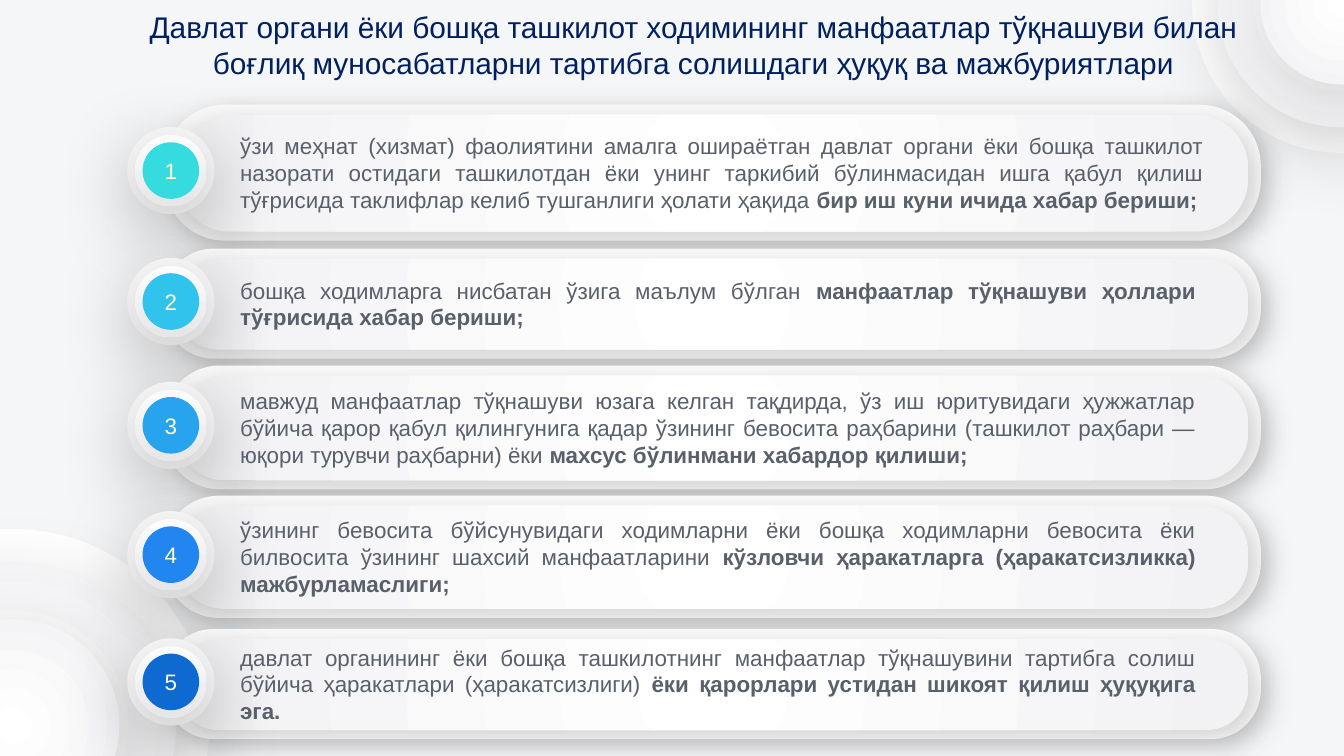
from lxml import etree
from pptx import Presentation
from pptx import util as u
from pptx.dml.color import RGBColor
from pptx.enum import shapes, text
from pptx.oxml import ns

COLORS = {
    "background": "F5F6F8", "white": "FFFFFF", "pill": "FCFCFC",
    "pill_edge": "F2F2F4", "disc_edge": "F0F0F3", "title": "002060",
    "body": "595F6B", "number": "FFFFCC",
}
# opacity %, blur pt, distance pt, direction in degrees
PILL_SHADOW = (17, 14, 5, 40)
DISC_SHADOW = (15, 45, 11.2, 85)
RING_SHADOW = (30, 45, 11.2, 85)

TITLE = ("Давлат органи ёки бошқа ташкилот ходимининг манфаатлар тўқнашуви билан "
         "боғлиқ муносабатларни тартибга солишдаги ҳуқуқ ва мажбуриятлари")

# top and height of the pill (cm), text width and height (cm), badge colour, plain text, bold text
ROWS = [
    (1.98, 2.57, 18.72, 1.8, "36DBE0",
     "ўзи меҳнат (хизмат) фаолиятини амалга ошираётган давлат органи ёки бошқа "
     "ташкилот назорати остидаги ташкилотдан ёки унинг таркибий бўлинмасидан ишга "
     "қабул қилиш тўғрисида таклифлар келиб тушганлиги ҳолати ҳақида ",
     "бир иш куни ичида хабар бериши;"),
    (4.7, 2.08, 18.57, 1.27, "30C3EB",
     "бошқа ходимларга нисбатан ўзига маълум бўлган ",
     "манфаатлар тўқнашуви ҳоллари тўғрисида хабар бериши;"),
    (6.91, 2.34, 18.57, 1.8, "28A3EE",
     "мавжуд манфаатлар тўқнашуви юзага келган тақдирда, ўз иш юритувидаги ҳужжатлар "
     "бўйича қарор қабул қилингунига қадар ўзининг бевосита раҳбарини (ташкилот "
     "раҳбари — юқори турувчи раҳбарни) ёки ",
     "махсус бўлинмани хабардор қилиши;"),
    (9.37, 2.31, 18.57, 1.8, "2186F0",
     "ўзининг бевосита бўйсунувидаги ходимларни ёки бошқа ходимларни бевосита ёки "
     "билвосита ўзининг шахсий манфаатларини ",
     "кўзловчи ҳаракатларга (ҳаракатсизликка) мажбурламаслиги;"),
    (11.89, 2.08, 18.57, 1.8, "0E6AD0",
     "давлат органининг ёки бошқа ташкилотнинг манфаатлар тўқнашувини тартибга солиш "
     "бўйича ҳаракатлари (ҳаракатсизлиги) ",
     "ёки қарорлари устидан шикоят қилиш ҳуқуқига эга."),
]


def rgb(name):
    return RGBColor.from_string(COLORS.get(name, name))


class SlideBuilder:
    font = "Arial"

    def __init__(self, prs):
        self.s = prs.slides.add_slide(prs.slide_layouts[6])
        fill = self.s.background.fill
        fill.solid()
        fill.fore_color.rgb = rgb("background")

    def shape(self, kind, x, y, w, h, fill, edge=None, radial=True, shadow=None):
        """Add a borderless shape; edge turns the fill into a gradient towards that colour."""
        sp = self.s.shapes.add_shape(kind, u.Cm(x), u.Cm(y), u.Cm(w), u.Cm(h))
        sp.line.fill.background()
        sp.shadow.inherit = False
        if edge:
            sp.fill.gradient()
            sp.fill.gradient_angle = 270
            for stop, color in zip(sp.fill.gradient_stops, (fill, edge)):
                stop.color.rgb = rgb(color)
            if radial:
                self.make_radial(sp)
        else:
            sp.fill.solid()
            sp.fill.fore_color.rgb = rgb(fill)
        if shadow:
            self.cast_shadow(sp, *shadow)
        return sp

    def make_radial(self, sp):
        lin = sp.element.spPr.find(".//" + ns.qn("a:lin"))
        circle = etree.SubElement(lin.getparent(), ns.qn("a:path"), path="circle")
        etree.SubElement(circle, ns.qn("a:fillToRect"),
                         dict.fromkeys("ltrb", "50000"))
        lin.getparent().replace(lin, circle)

    def cast_shadow(self, sp, opacity, blur, distance, angle):
        effects = sp.element.spPr.find(ns.qn("a:effectLst"))
        outer = etree.SubElement(
            effects, ns.qn("a:outerShdw"), blurRad=str(u.Pt(blur)),
            dist=str(u.Pt(distance)), dir=str(angle * 60000),
            algn="ctr", rotWithShape="0")
        color = etree.SubElement(outer, ns.qn("a:srgbClr"), val="000000")
        etree.SubElement(color, ns.qn("a:alpha"), val=str(opacity * 1000))

    def disc(self, cx, cy, d, fill, **style):
        return self.shape(shapes.MSO_SHAPE.OVAL, cx - d / 2, cy - d / 2, d, d, fill, **style)

    def corner(self, cx, cy, outer, *inner):
        self.disc(cx, cy, outer, "white")
        for d in inner:
            self.disc(cx, cy, d, "white", edge="disc_edge", shadow=DISC_SHADOW)

    def pill(self, y, h):
        kind = shapes.MSO_SHAPE.ROUNDED_RECTANGLE
        for sp in (
            self.shape(kind, 3.1, y, 20.73, h, "pill", shadow=PILL_SHADOW),
            self.shape(kind, 3.35, y + 0.19, 20.24, h - 0.36, "white",
                       edge="pill_edge", shadow=PILL_SHADOW),
        ):
            sp.adjustments[0] = 0.45

    def badge(self, cy, number, color):
        cx = 3.23
        self.disc(cx, cy, 1.65, "white")
        self.disc(cx, cy, 1.35, "white", edge="disc_edge", radial=False, shadow=RING_SHADOW)
        sp = self.disc(cx, cy, 1.07, color, shadow=DISC_SHADOW)
        self.set_text(sp.text_frame, [(str(number), False)], 12, "number",
                      text.PP_ALIGN.CENTER, wrap=False)

    def text_box(self, x, y, w, h, runs, size, color, align):
        box = self.s.shapes.add_textbox(u.Cm(x), u.Cm(y), u.Cm(w), u.Cm(h))
        self.set_text(box.text_frame, runs, size, color, align)

    def set_text(self, tf, runs, size, color, align, wrap=True):
        tf.word_wrap = wrap
        tf.vertical_anchor = text.MSO_ANCHOR.MIDDLE
        p = tf.paragraphs[0]
        p.alignment = align
        p.font.name = self.font
        p.font.size = u.Pt(size)
        p.font.color.rgb = rgb(color)
        for content, bold in runs:
            r = p.add_run()
            r.text = content
            if bold:
                r.font.bold = True


def main():
    prs = Presentation()
    prs.slide_width, prs.slide_height = u.Cm(25.4), u.Cm(14.29)
    b = SlideBuilder(prs)
    b.corner(0.25, 13.71, 7.42, 6.15, 4.01)
    b.corner(25.35, 0.07, 5.64, 4.67, 3.05)
    b.text_box(2.39, 0.33, 21.44, 1.04, [(TITLE, False)], 16, "title",
               text.PP_ALIGN.CENTER)
    for number, (y, h, text_w, text_h, color, plain, bold) in enumerate(ROWS, 1):
        middle = y + h / 2
        b.pill(y, h)
        b.badge(middle - 0.04, number, color)
        b.text_box(4.29, middle - text_h / 2, text_w, text_h,
                   [(plain, False), (bold, True)], 12, "body", text.PP_ALIGN.JUSTIFY)
    prs.save("out.pptx")


if __name__ == "__main__":
    main()
